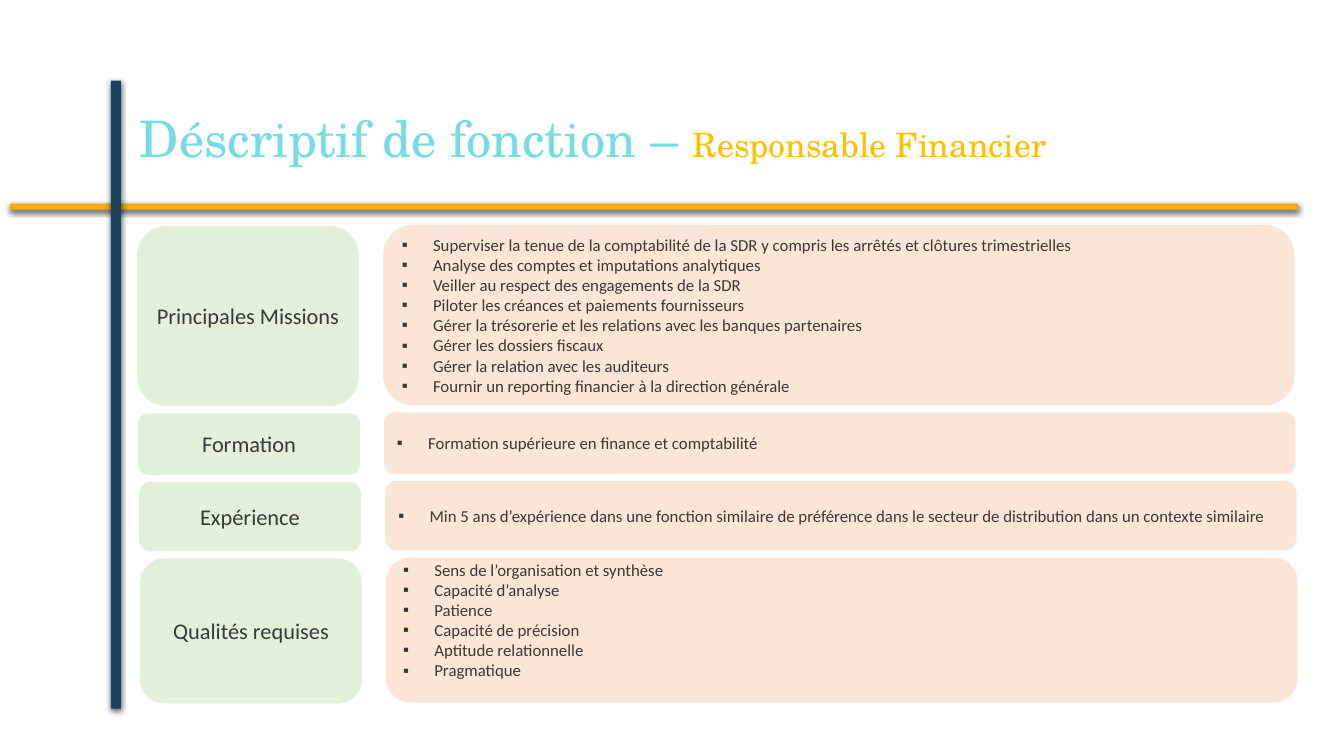
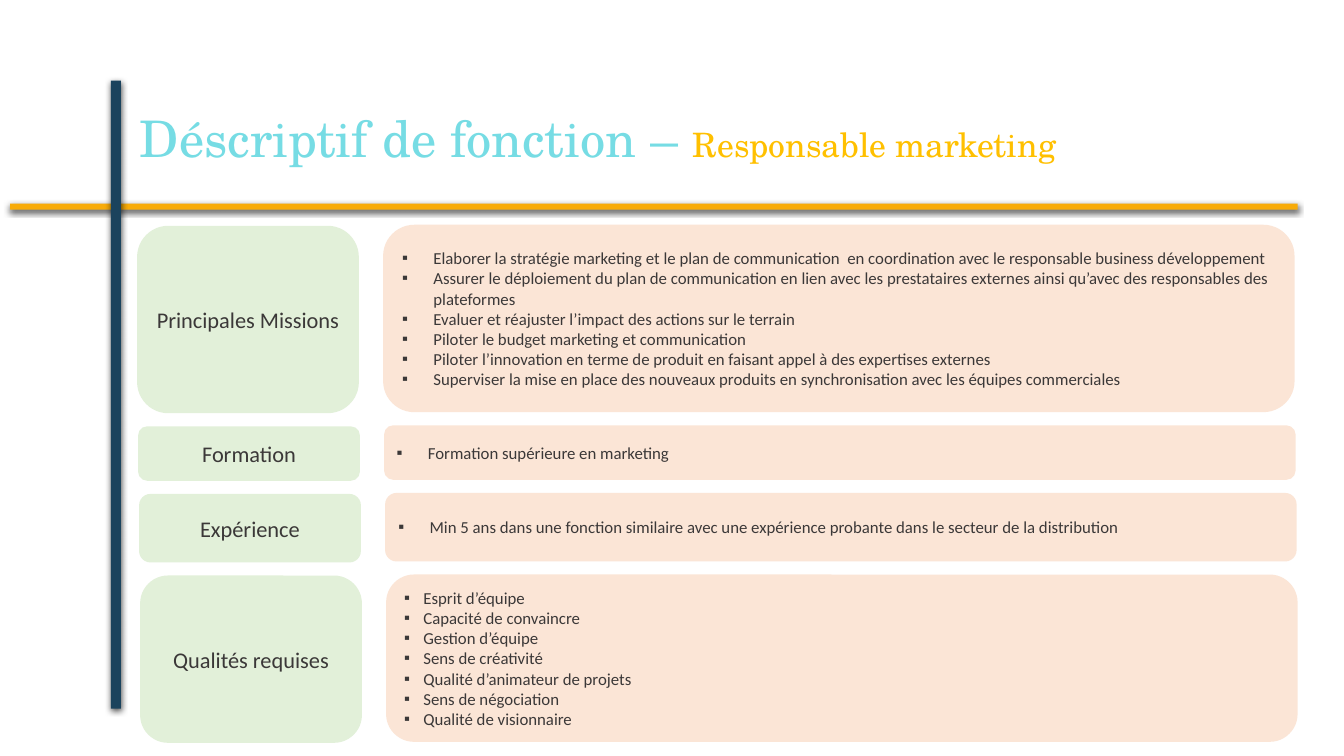
from lxml import etree
from pptx import Presentation
from pptx.dml.color import RGBColor
from pptx.enum.shapes import MSO_SHAPE
from pptx.enum.text import MSO_ANCHOR, PP_ALIGN
from pptx.oxml import parse_xml
from pptx.oxml.ns import nsdecls, qn
from pptx.util import Inches, Pt

RECT, ROUND = MSO_SHAPE.RECTANGLE, MSO_SHAPE.ROUNDED_RECTANGLE
MIDDLE = MSO_ANCHOR.MIDDLE
LEFT, CENTER = PP_ALIGN.LEFT, PP_ALIGN.CENTER

COLORS = {
    "gold": "F8AB08", "navy": "1B435D", "title": "76DCE4", "role": "FFC000",
    "label": "E2F0D9", "detail": "FBE5D6", "text": "3B3838",
}
TITLE_FONT, BODY_FONT = "TeX Gyre Schola", "Calibri"
TITLE = "Déscriptif de fonction – "
LABELS = ["Principales Missions", "Formation", "Expérience", "Qualités requises"]

JOBS = [
    {
        "role": "Responsable Financier",
        "gap": 0.07,
        "heights": [1.79, 0.61, 0.69, 1.44],
        "indents": [0.31, 0.31, 0.31, 0.31],
        "bottoms": [0.05, 0.05, 0.05, 0.25],
        "details": [
            [
                "Superviser la tenue de la comptabilité de la SDR y compris les arrêtés et clôtures trimestrielles",
                "Analyse des comptes et imputations analytiques",
                "Veiller au respect des engagements de la SDR",
                "Piloter les créances et paiements fournisseurs",
                "Gérer la trésorerie et les relations avec les banques partenaires",
                "Gérer les dossiers fiscaux",
                "Gérer la relation avec les auditeurs",
                "Fournir un reporting financier à la direction générale",
            ],
            ["Formation supérieure en finance et comptabilité"],
            ["Min 5 ans d’expérience dans une fonction similaire de préférence dans le secteur de distribution dans un contexte similaire"],
            [
                "Sens de l’organisation et synthèse",
                "Capacité d’analyse",
                "Patience",
                "Capacité de précision",
                "Aptitude relationnelle",
                "Pragmatique",
            ],
        ],
    },
    {
        "role": "Responsable marketing",
        "gap": 0.13,
        "heights": [1.86, 0.54, 0.68, 1.66],
        "indents": [0.31, 0.31, 0.31, 0.19],
        "bottoms": [0.05, 0.05, 0.05, 0.05],
        "details": [
            [
                "Elaborer la stratégie marketing et le plan de communication  en coordination avec le responsable business développement",
                "Assurer le déploiement du plan de communication en lien avec les prestataires externes ainsi qu’avec des responsables des plateformes",
                "Evaluer et réajuster l’impact des actions sur le terrain",
                "Piloter le budget marketing et communication",
                "Piloter l’innovation en terme de produit en faisant appel à des expertises externes",
                "Superviser la mise en place des nouveaux produits en synchronisation avec les équipes commerciales",
            ],
            ["Formation supérieure en marketing"],
            ["Min 5 ans dans une fonction similaire avec une expérience probante dans le secteur de la distribution"],
            [
                "Esprit d’équipe",
                "Capacité de convaincre",
                "Gestion d’équipe",
                "Sens de créativité",
                "Qualité d’animateur de projets",
                "Sens de négociation",
                "Qualité de visionnaire",
            ],
        ],
    },
]

TOP, LABEL_X, DETAIL_X, STEP = 2.23, 1.36, 3.8, 0.01
LABEL_W, DETAIL_W = 2.2, 9.04

SHADOW = (
    f'<a:effectLst {nsdecls("a")}>'
    '<a:outerShdw blurRad="57150" dist="19050" dir="5400000" algn="ctr" rotWithShape="0">'
    '<a:srgbClr val="000000"><a:alpha val="63000"/></a:srgbClr>'
    '</a:outerShdw></a:effectLst>'
)


def rgb(name):
    return RGBColor.from_string(COLORS[name])


def set_font(font, name, size, color):
    font.name, font.size = name, Pt(size)
    font.color.rgb = rgb(color)


def add_box(s, kind, x, y, w, h, color):
    sp = s.shapes.add_shape(kind, Inches(x), Inches(y), Inches(w), Inches(h))
    sp.shadow.inherit = False
    sp.fill.solid()
    sp.fill.fore_color.rgb = rgb(color)
    sp.line.fill.background()
    sp.text_frame.word_wrap = True
    sp.text_frame.vertical_anchor = MIDDLE
    return sp


def add_band(s, x, y, w, h, color):
    pr = add_box(s, RECT, x, y, w, h, color)._element.spPr
    pr.replace(pr.find(qn("a:effectLst")), parse_xml(SHADOW))


def write_lines(tf, lines, size, align, indent=0):
    for i, line in enumerate(lines):
        p = tf.paragraphs[0] if i == 0 else tf.add_paragraph()
        p.text = line
        p.alignment = align
        if indent:
            pr = p._p.get_or_add_pPr()
            pr.set("marL", str(Inches(indent)))
            pr.set("indent", str(-Inches(indent)))
            etree.SubElement(pr, qn("a:buFont")).set("typeface", "Arial")
            etree.SubElement(pr, qn("a:buChar")).set("char", "▪")
        set_font(p.font, BODY_FONT, size, "text")


def add_frame(s, role):
    add_band(s, 0.1, 2.02, 12.77, 0.06, "gold")
    add_band(s, 1.1, 0.8, 0.1, 6.23, "navy")
    tf = s.shapes.add_textbox(Inches(1.29), Inches(0.8), Inches(11.5), Inches(1.2)).text_frame
    tf.word_wrap = True
    tf.vertical_anchor = MIDDLE
    p = tf.paragraphs[0]
    p.line_spacing = 0.9
    for text, size, color in ((TITLE, 36, "title"), (role, 24, "role")):
        r = p.add_run()
        r.text = text
        set_font(r.font, TITLE_FONT, size, color)


def add_job(prs, job):
    s = prs.slides.add_slide(prs.slide_layouts[6])
    add_frame(s, job["role"])
    y = TOP
    rows = zip(LABELS, job["heights"], job["details"], job["indents"], job["bottoms"])
    for i, (label, h, lines, indent, bottom) in enumerate(rows):
        shift = i * STEP
        tf = add_box(s, ROUND, LABEL_X + shift, y + STEP, LABEL_W, h, "label").text_frame
        tf.margin_left = tf.margin_right = Inches(0.05)
        write_lines(tf, [label], 16, CENTER)
        tf = add_box(s, ROUND, DETAIL_X + shift, y, DETAIL_W, h, "detail").text_frame
        tf.margin_bottom = Inches(bottom)
        write_lines(tf, lines, 12, LEFT, indent)
        y += h + job["gap"]


def main():
    prs = Presentation()
    prs.slide_width, prs.slide_height = Inches(13.33), Inches(7.5)
    for job in JOBS:
        add_job(prs, job)
    prs.save("out.pptx")


if __name__ == "__main__":
    main()
